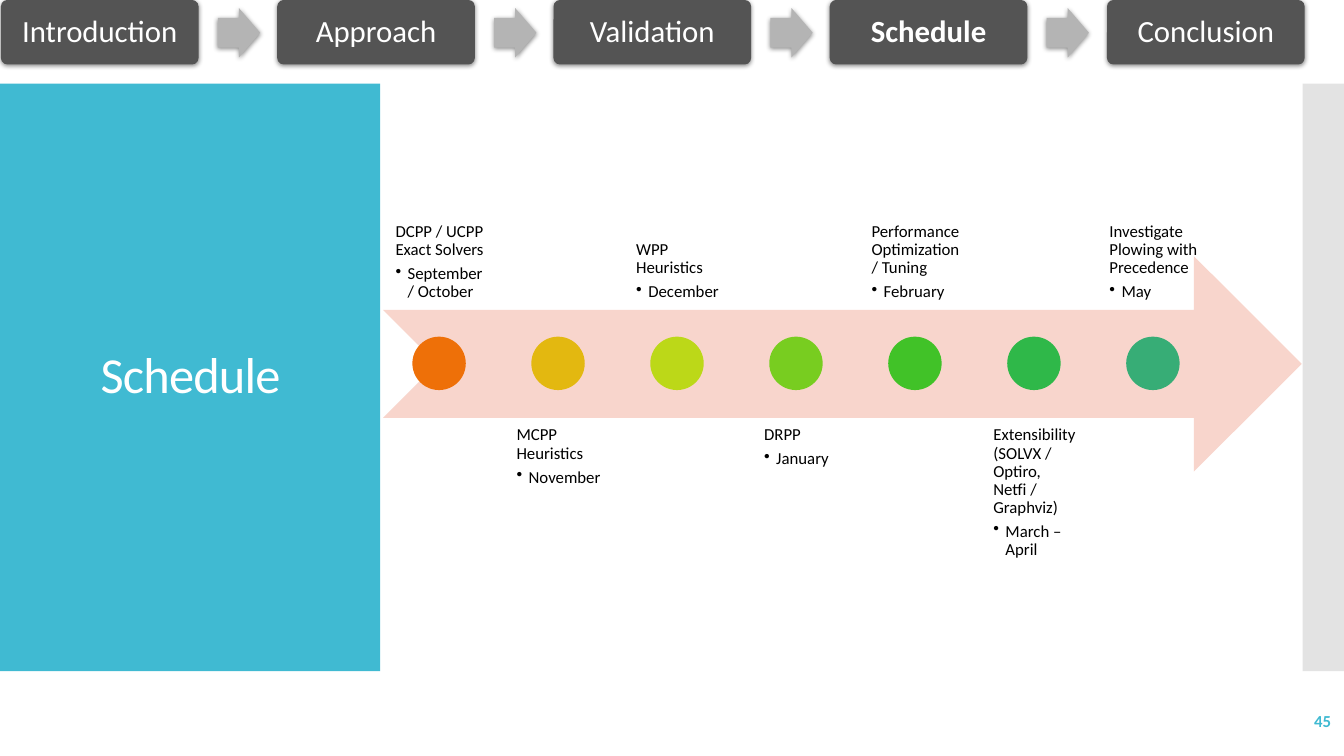
from lxml.etree import SubElement
from pptx import Presentation
from pptx.dml.color import RGBColor
from pptx.enum.shapes import MSO_SHAPE
from pptx.enum.text import MSO_ANCHOR, PP_ALIGN
from pptx.oxml import parse_xml
from pptx.oxml.ns import nsdecls, qn
from pptx.util import Pt

PX = 9144
SOFT_SHADOW = (
    f'<a:effectLst {nsdecls("a")}>'
    '<a:outerShdw blurRad="44450" dist="13970" dir="5400000" rotWithShape="0">'
    '<a:srgbClr val="000000"><a:alpha val="45000"/></a:srgbClr>'
    '</a:outerShdw></a:effectLst>'
)


def add_block(shapes, preset, box, color):
    block = shapes.add_shape(preset, *(n * PX for n in box))
    block.shadow.inherit = False
    block.fill.solid()
    block.fill.fore_color.rgb = RGBColor.from_string(color)
    block.line.fill.background()
    return block


def add_words(paragraph, words, size, color, bold=False):
    run = paragraph.add_run()
    run.text = words
    run.font.name = "Calibri"
    run.font.size = Pt(size)
    run.font.bold = bold
    run.font.color.rgb = RGBColor.from_string(color)
    return run


prs = Presentation()
prs.slide_width = 1333 * PX
prs.slide_height = 750 * PX
slide = prs.slides.add_slide(prs.slide_layouts[6])

add_block(slide.shapes, MSO_SHAPE.RECTANGLE, (0, 83, 377, 583), "40BAD2")
side_band = add_block(slide.shapes, MSO_SHAPE.RECTANGLE, (1292, 83, 41, 583), "C8C8C8")
band_color = side_band.fill._xPr.find(qn("a:solidFill"))[0]
SubElement(band_color, qn("a:alpha"), val="50000")

title = slide.shapes.add_textbox(28 * PX, 123 * PX, 322 * PX, 503 * PX).text_frame
title.word_wrap = True
title.vertical_anchor = MSO_ANCHOR.MIDDLE
title.paragraphs[0].alignment = PP_ALIGN.CENTER
title.paragraphs[0].line_spacing = 0.9
title_run = add_words(title.paragraphs[0], "Schedule", 36, "FFFFFF")
title_run.font._element.set("spc", "-60")

milestones = [
    ("DCPP / UCPP Exact Solvers", "September / October", "EE7008"),
    ("MCPP Heuristics", "November", "E3B810"),
    ("WPP Heuristics", "December", "BCD818"),
    ("DRPP", "January", "78CD20"),
    ("Performance Optimization / Tuning", "February", "41C228"),
    ("Extensibility (SOLVX / Optiro, Netfi / Graphviz)", "March – April", "2FB849"),
    ("Investigate Plowing with Precedence", "May", "37AD76"),
]
timeline = slide.shapes.add_group_shape().shapes
add_block(timeline, MSO_SHAPE.NOTCHED_RIGHT_ARROW, (380, 254, 911, 214), "F8D5CC")

for i, (task, month, color) in enumerate(milestones):
    left = 380 + 118 * i
    above = i % 2 == 0
    top = 94 if above else 414
    label = timeline.add_textbox(left * PX, top * PX, 112 * PX, 214 * PX).text_frame
    label.word_wrap = True
    label.vertical_anchor = MSO_ANCHOR.BOTTOM if above else MSO_ANCHOR.TOP
    label.margin_left = label.margin_right = 9 * PX
    label.margin_top = label.margin_bottom = 9 * PX
    label._txBody.bodyPr.set("anchorCtr", "1")

    task_line = label.paragraphs[0]
    task_line.line_spacing = 0.9
    task_line.space_after = Pt(4.2)
    add_words(task_line, task, 12, "000000")

    month_line = label.add_paragraph()
    month_line.level = 1
    month_line.line_spacing = 0.9
    month_line.space_after = Pt(1.8)
    add_words(month_line, month, 12, "000000")
    bullet = month_line._p.get_or_add_pPr()
    bullet.set("marL", str(12 * PX))
    bullet.set("indent", str(-12 * PX))
    SubElement(bullet, qn("a:buChar"), char="•")

    add_block(timeline, MSO_SHAPE.OVAL, (left + 29, 334, 53, 53), color)

sections = ["Introduction", "Approach", "Validation", "Schedule", "Conclusion"]
navigation = slide.shapes.add_group_shape().shapes
for i, section in enumerate(sections):
    left = 1 + 1097 * i // 4
    step = add_block(navigation, MSO_SHAPE.ROUNDED_RECTANGLE, (left, 0, 196, 64), "545454")
    step.adjustments[0] = 0.1
    raised = [step]
    step.text_frame.word_wrap = True
    step.text_frame.vertical_anchor = MSO_ANCHOR.MIDDLE
    step.text_frame.margin_left = step.text_frame.margin_right = 9 * PX
    step.text_frame.margin_top = step.text_frame.margin_bottom = 9 * PX
    name = step.text_frame.paragraphs[0]
    name.alignment = PP_ALIGN.CENTER
    name.line_spacing = 0.9
    add_words(name, section, 22, "FFFFFF", bold=section == "Schedule")

    if i < len(sections) - 1:
        arrow = add_block(navigation, MSO_SHAPE.RIGHT_ARROW, (left + 215, 8, 42, 49), "B4B4B4")
        arrow.adjustments[0] = 0.6
        arrow.adjustments[1] = 0.5
        raised.append(arrow)

    for part in raised:
        properties = part._element.spPr
        properties.replace(properties.find(qn("a:effectLst")), parse_xml(SOFT_SHADOW))

page = slide.shapes.add_textbox(1163 * PX, 695 * PX, 167 * PX, 40 * PX).text_frame
page.word_wrap = True
page.vertical_anchor = MSO_ANCHOR.MIDDLE
page.paragraphs[0].alignment = PP_ALIGN.RIGHT
add_words(page.paragraphs[0], "45", 12, "40BAD2", bold=True)

prs.save("out.pptx")
